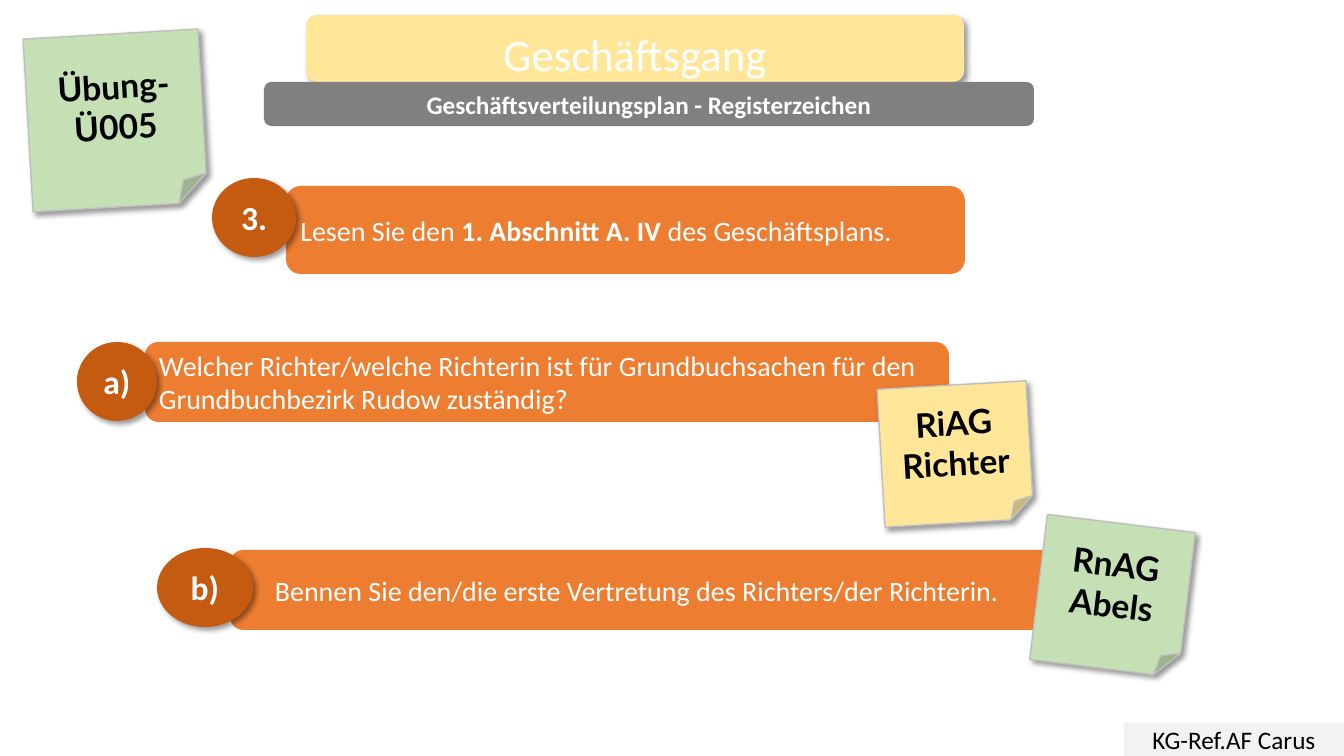
from dataclasses import dataclass

from lxml import etree
from pptx import Presentation
from pptx.dml.color import RGBColor
from pptx.enum.shapes import MSO_SHAPE
from pptx.enum.text import MSO_ANCHOR, PP_ALIGN
from pptx.oxml.ns import qn
from pptx.util import Pt

RECT = MSO_SHAPE.RECTANGLE
ROUND = MSO_SHAPE.ROUNDED_RECTANGLE
FOLD = MSO_SHAPE.FOLDED_CORNER
DISC = MSO_SHAPE.FLOWCHART_CONNECTOR
MIDDLE = MSO_ANCHOR.MIDDLE
LEFT, CENTER = PP_ALIGN.LEFT, PP_ALIGN.CENTER

WIDE, HIGH = 1344, 756
SCALE = 12192000 / WIDE


@dataclass(frozen=True)
class Theme:
    body: str = "Calibri"
    hand: str = "Lato"
    white: str = "FFFFFF"
    black: str = "000000"
    pale: str = "F2F2F2"
    gray: str = "808080"
    edge: str = "BFBFBF"
    yellow: str = "FFE699"
    green: str = "C5E0B4"
    orange: str = "ED7D31"
    rust: str = "C55A11"
    title: int = 32
    label: int = 24
    text: int = 20
    small: int = 18


THEME = Theme()


def emu(px):
    return round(px * SCALE)


def place(shape, box):
    for name, px in zip(("left", "top", "width", "height"), box):
        setattr(shape, name, emu(px))


def shade(shape):
    """Give the shape a soft shadow towards the lower right."""
    effects = shape._element.spPr.find(qn("a:effectLst"))
    outer = etree.SubElement(effects, qn("a:outerShdw"), blurRad=str(Pt(4)),
                             dist=str(Pt(3)), dir="2700000", algn="tl", rotWithShape="0")
    color = etree.SubElement(outer, qn("a:srgbClr"), val=THEME.black)
    etree.SubElement(color, qn("a:alpha"), val="40000")


def add_box(shapes, kind, box, fill, shadow=False):
    shape = shapes.add_shape(kind, *map(emu, box))
    shape.shadow.inherit = False
    shape.fill.solid()
    shape.fill.fore_color.rgb = RGBColor.from_string(fill)
    shape.line.fill.background()
    if shadow:
        shade(shape)
    return shape


def write(shape, lines, size, color=THEME.white, font=THEME.body, bold=False, align=CENTER):
    """Write lines of text; each line is a list of runs, and odd runs are bold."""
    frame = shape.text_frame
    frame.word_wrap = True
    frame.vertical_anchor = MIDDLE
    for row, runs in enumerate(lines):
        para = frame.paragraphs[0] if row == 0 else frame.add_paragraph()
        para.alignment = align
        for spot, words in enumerate(runs):
            run = para.add_run()
            run.text = words
            look = {"name": font, "size": Pt(size), "bold": bold or spot % 2 == 1}
            for name, value in look.items():
                setattr(run.font, name, value)
            run.font.color.rgb = RGBColor.from_string(color)


def add_title(slide, box, words):
    add_box(slide.shapes, ROUND, box, THEME.yellow, shadow=True)
    title = slide.shapes.title
    place(title, box)
    write(title, [[words]], THEME.title)
    title.text_frame.margin_top = emu(10)
    title.text_frame.margin_bottom = 0
    slide.shapes._spTree.append(title._element)


def add_task(shapes, bar, disc, mark, runs, pad=10):
    """Add a question bar with its round mark; pad is the left text margin."""
    task = add_box(shapes, ROUND, bar, THEME.orange)
    write(task, [runs], THEME.text, align=LEFT)
    task.text_frame.margin_left = emu(pad)
    badge = add_box(shapes, DISC, disc, THEME.rust, shadow=True)
    write(badge, [[mark]], THEME.label, bold=True)


def add_note(shapes, box, turn, fill, lines):
    note = add_box(shapes, FOLD, box, fill, shadow=True)
    note.rotation = turn
    note.line.color.rgb = RGBColor.from_string(THEME.edge)
    note.line.width = Pt(1)
    write(note, [[line] for line in lines], THEME.label, THEME.black, THEME.hand, True)


def main():
    deck = Presentation()
    deck.slide_width, deck.slide_height = emu(WIDE), emu(HIGH)
    slide = deck.slides.add_slide(deck.slide_layouts[5])
    shapes = slide.shapes

    footer = add_box(shapes, RECT, (1124, 723, 220, 33), THEME.pale)
    write(footer, [["KG-Ref.AF Carus"]], THEME.small, THEME.black)

    add_title(slide, (306, 15, 658, 67), "Geschäftsgang")
    add_note(shapes, (28, 34, 175, 173), 356.7, THEME.green, ["Übung-", "Ü005"])
    add_task(shapes, (286, 186, 679, 88), (212, 178, 84, 79), "3.",
             ["Lesen Sie den ", "1. Abschnitt A. IV", " des Geschäftsplans."])

    banner = add_box(shapes, ROUND, (264, 82, 770, 44), THEME.gray)
    write(banner, [["Geschäftsverteilungsplan - Registerzeichen"]], THEME.small, bold=True)

    add_task(shapes.add_group_shape().shapes, (145, 342, 804, 80), (77, 342, 80, 79), "a)",
             ["Welcher Richter/welche Richterin ist für Grundbuchsachen "
              "für den Grundbuchbezirk Rudow zuständig?"])
    add_task(shapes.add_group_shape().shapes, (230, 550, 833, 80), (157, 548, 96, 79), "b)",
             ["Bennen Sie den/die erste Vertretung des Richters/der Richterin."], pad=41)

    add_note(shapes, (881, 385, 149, 138), 356.7, THEME.yellow, ["RiAG Richter"])
    add_note(shapes, (1038, 523, 149, 146), 7, THEME.green, ["RnAG", "Abels"])

    deck.save("out.pptx")


if __name__ == "__main__":
    main()
